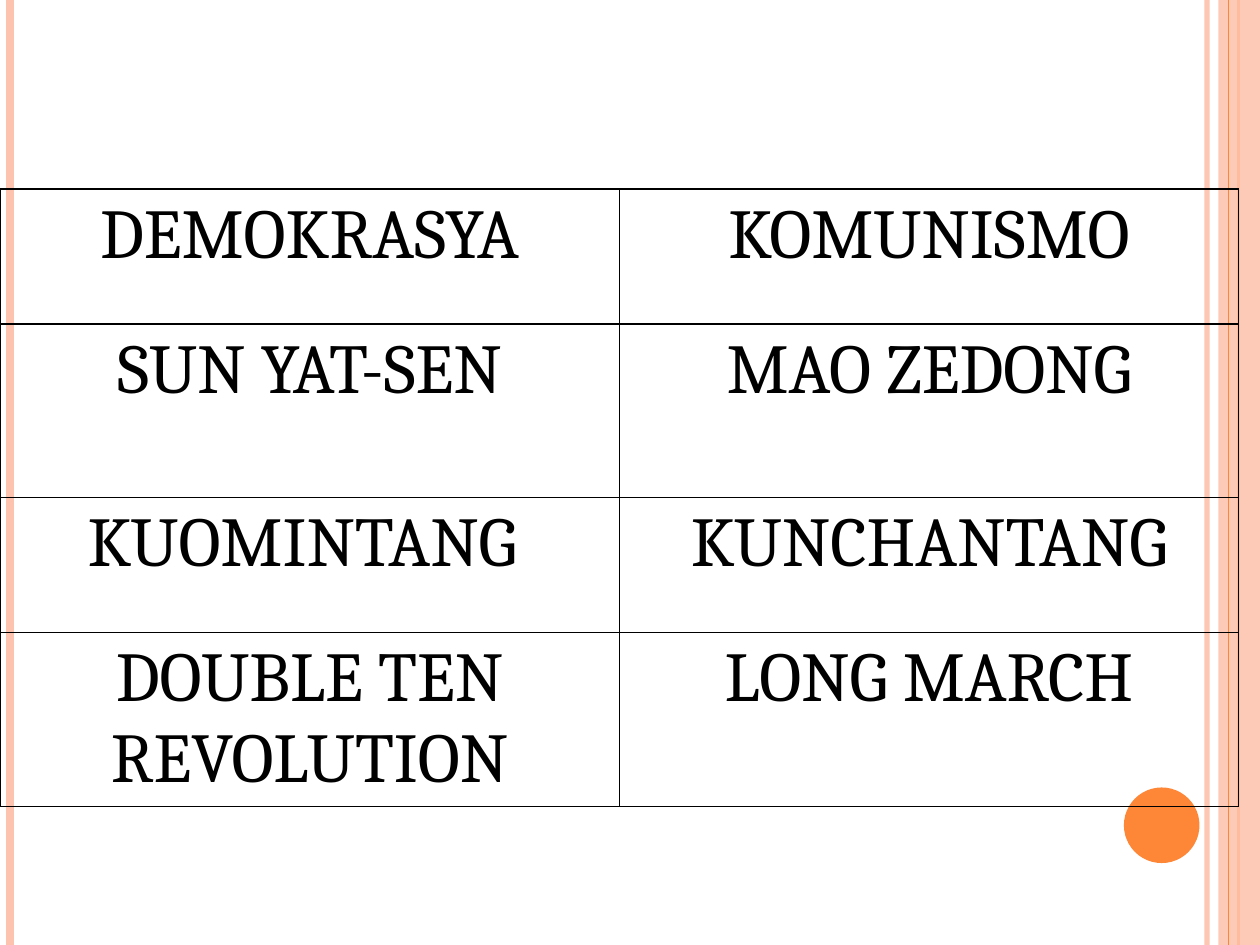
from lxml.etree import SubElement
from pptx import Presentation
from pptx.dml.color import RGBColor
from pptx.enum.shapes import MSO_CONNECTOR, MSO_SHAPE
from pptx.enum.text import PP_ALIGN
from pptx.oxml.ns import qn
from pptx.util import Inches, Pt

# Content
ROWS = [
    ("DEMOKRASYA", "KOMUNISMO"),
    ("SUN YAT-SEN", "MAO ZEDONG"),
    ("KUOMINTANG ", "KUNCHANTANG"),
    ("DOUBLE TEN REVOLUTION", "LONG MARCH"),
]
ROW_HEIGHTS = [1.07, 1.38, 1.07, 1.38]
TABLE_TOP, TABLE_WIDTH = 1.5, 9.83

# Theme colours and vertical rules: x, colour, width, opacity
PINK, ORANGE, BLACK = "FEC3AE", "FE8637", "000000"
RULES_BEHIND = [(9.58, PINK, 3, 93), (0.08, PINK, 4.5, 100), (9.83, ORANGE, 1.5, 100)]
RULES_FRONT = [(9.75, ORANGE, 0.75, 100)]
PAGE_WIDTH, PAGE_HEIGHT = 10, 7.5


def paint(fill, color, opacity=100):
    fill.solid()
    fill.fore_color.rgb = RGBColor.from_string(color)
    if opacity < 100:
        color_node = fill._xPr.find(qn("a:solidFill"))[0]
        SubElement(color_node, qn("a:alpha"), val=str(opacity * 1000))


def add_rules(page, rules):
    for x, color, width, opacity in rules:
        rule = page.shapes.add_connector(
            MSO_CONNECTOR.STRAIGHT, Inches(x), 0, Inches(x), Inches(PAGE_HEIGHT))
        rule.line.width = Pt(width)
        paint(rule.line.fill, color, opacity)
        SubElement(rule._element.spPr, qn("a:effectLst"))


def add_shape(page, kind, left, top, width, height, color, opacity=100):
    shape = page.shapes.add_shape(
        kind, Inches(left), Inches(top), Inches(width), Inches(height))
    shape.shadow.inherit = False
    shape.line.fill.background()
    paint(shape.fill, color, opacity)


def add_borders(cell, color, width):
    properties = cell._tc.get_or_add_tcPr()
    for index, side in enumerate(("lnL", "lnR", "lnT", "lnB")):
        border = properties.makeelement(qn(f"a:{side}"), {"w": str(Pt(width))})
        fill = SubElement(border, qn("a:solidFill"))
        SubElement(fill, qn("a:srgbClr"), val=color)
        properties.insert(index, border)


def add_comparison(page):
    frame = page.shapes.add_table(
        len(ROWS), len(ROWS[0]), 0, Inches(TABLE_TOP),
        Inches(TABLE_WIDTH), Inches(sum(ROW_HEIGHTS)))
    table = frame.table
    table.first_row = table.horz_banding = False
    for row, height, texts in zip(table.rows, ROW_HEIGHTS, ROWS):
        row.height = Inches(height)
        for cell, text in zip(row.cells, texts):
            cell.fill.background()
            add_borders(cell, BLACK, 1)
            para = cell.text_frame.paragraphs[0]
            para.alignment = PP_ALIGN.CENTER
            span = para.add_run()
            span.text = text
            span.font.name = "Cambria"
            span.font.size = Pt(40)
            span.font.color.rgb = RGBColor.from_string(BLACK)


def main():
    deck = Presentation()
    deck.slide_width, deck.slide_height = Inches(PAGE_WIDTH), Inches(PAGE_HEIGHT)
    page = deck.slides.add_slide(deck.slide_layouts[6])

    # Side decoration
    add_rules(page, RULES_BEHIND)
    add_shape(page, MSO_SHAPE.RECTANGLE, 9.67, 0, 0.33, PAGE_HEIGHT, PINK, 87)
    add_rules(page, RULES_FRONT)
    add_shape(page, MSO_SHAPE.OVAL, 8.92, 6.25, 0.6, 0.6, ORANGE)

    # Comparison table
    add_comparison(page)
    deck.save("out.pptx")


if __name__ == "__main__":
    main()
